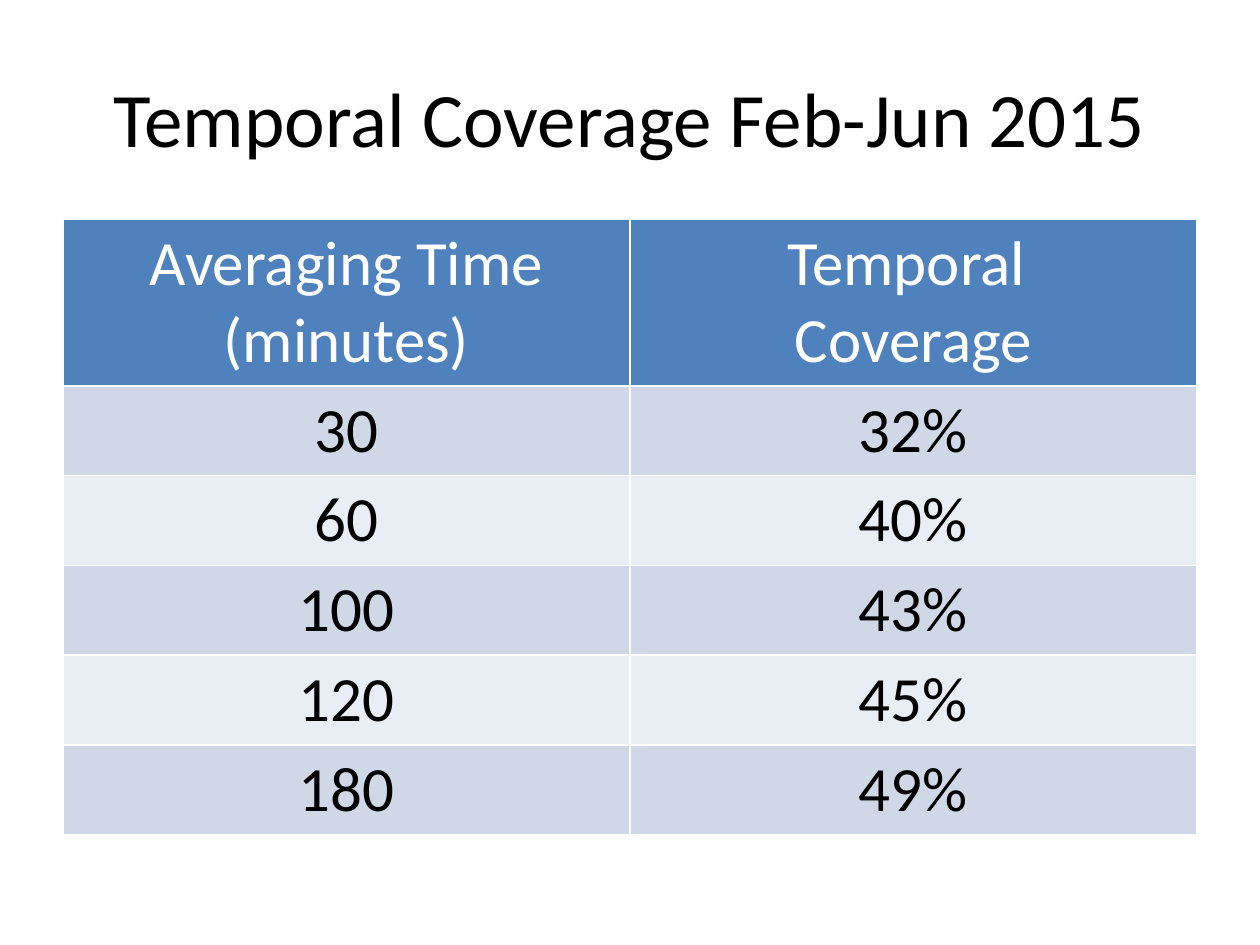
from pptx import Presentation
from pptx import util as u
from pptx.dml.color import RGBColor
from pptx.enum import text

PX = u.Inches(1) // 126
WHITE = RGBColor(0xFF, 0xFF, 0xFF)
BLACK = RGBColor(0x00, 0x00, 0x00)
HEADER = RGBColor(0x4F, 0x81, 0xBD)
BANDS = (RGBColor(0xD0, 0xD8, 0xE8), RGBColor(0xE9, 0xED, 0xF4))
HEADER_H, ROW_H = 166, 89

ROWS = [
    ("Averaging Time (minutes)", "Temporal \nCoverage"),
    ("30", "32%"),
    ("60", "40%"),
    ("100", "43%"),
    ("120", "45%"),
    ("180", "49%"),
]


def format_text(tf, size, color):
    for p in tf.paragraphs:
        p.alignment = text.PP_ALIGN.CENTER
        for r in p.runs:
            r.font.name = "Calibri"
            r.font.size = u.Pt(size)
            r.font.bold = False
            r.font.color.rgb = color


def place_title(s, x, y, w, h):
    sp = s.shapes.title
    sp.left, sp.top, sp.width, sp.height = (v * PX for v in (x, y, w, h))
    tf = sp.text_frame
    tf.text = "Temporal Coverage Feb-Jun 2015"
    tf.vertical_anchor = text.MSO_ANCHOR.MIDDLE
    format_text(tf, 44, BLACK)


def place_table(s, x, y, w):
    h = HEADER_H + ROW_H * (len(ROWS) - 1)
    box = (v * PX for v in (x, y, w, h))
    table = s.shapes.add_table(len(ROWS), len(ROWS[0]), *box).table
    for i, values in enumerate(ROWS):
        table.rows[i].height = (ROW_H if i else HEADER_H) * PX
        for j, value in enumerate(values):
            cell = table.cell(i, j)
            cell.fill.solid()
            cell.fill.fore_color.rgb = BANDS[(i - 1) % 2] if i else HEADER
            cell.text_frame.text = value
            format_text(cell.text_frame, 36, BLACK if i else WHITE)


def main():
    prs = Presentation()
    prs.slide_width, prs.slide_height = 1260 * PX, 945 * PX
    s = prs.slides.add_slide(prs.slide_layouts[5])
    place_title(s, 63, 38, 1134, 157)
    place_table(s, 63, 219, 1134)
    prs.save("out.pptx")


if __name__ == "__main__":
    main()
